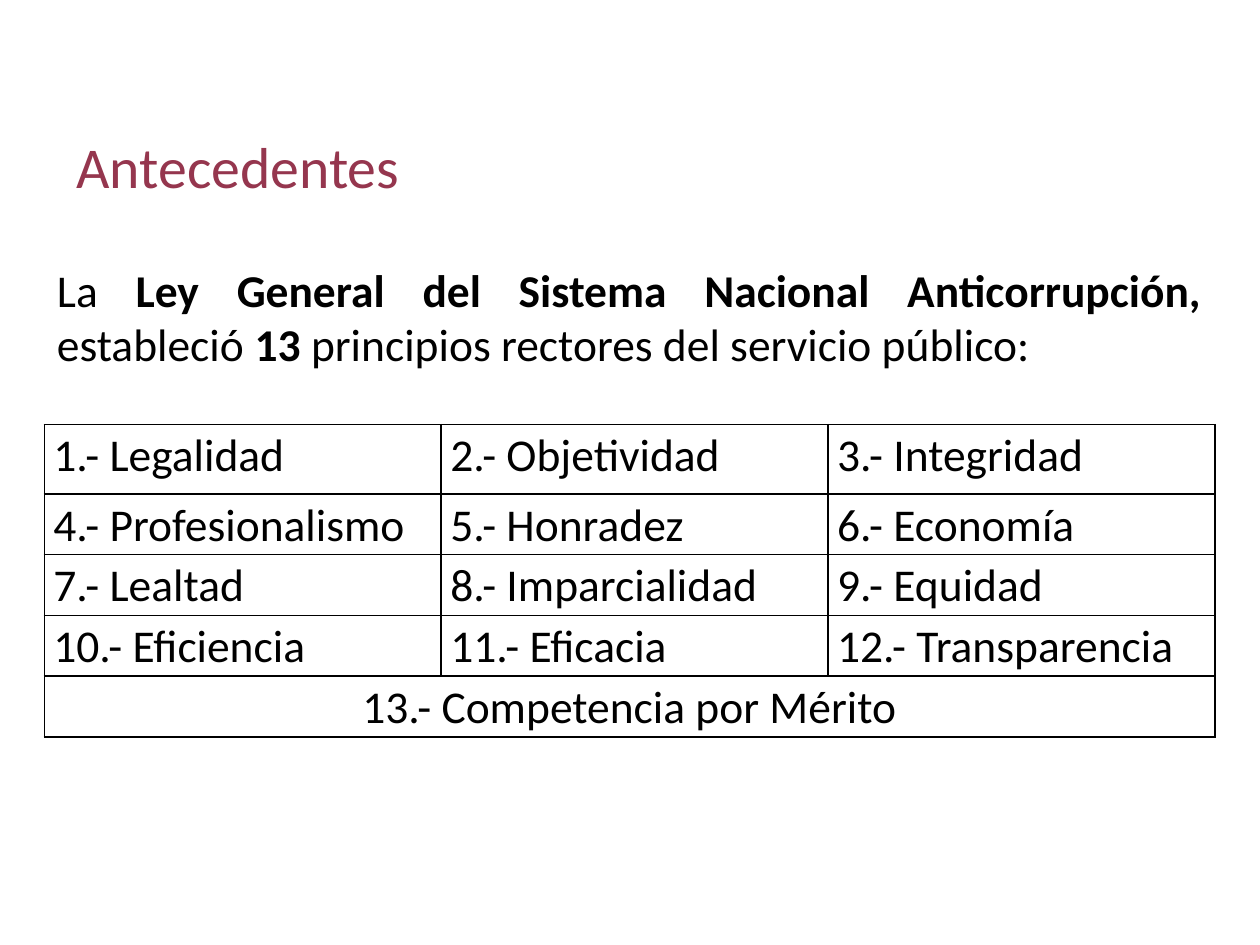
from lxml.etree import SubElement
from pptx import Presentation
from pptx.dml.color import RGBColor
from pptx.enum.text import MSO_ANCHOR, MSO_AUTO_SIZE, PP_ALIGN
from pptx.oxml.ns import qn
from pptx.util import Pt

BLACK = RGBColor(0, 0, 0)
WHITE = RGBColor(255, 255, 255)
WINE = RGBColor(0x95, 0x36, 0x4E)

HEADING = "Antecedentes"
INTRO = [  # text, bold
    ("La ", False),
    ("Ley General del Sistema Nacional Anticorrupción, ", True),
    ("estableció ", False),
    ("13 ", True),
    ("principios rectores del servicio público: ", False),
]
VALUES = [
    "Legalidad", "Objetividad", "Integridad",
    "Profesionalismo", "Honradez", "Economía",
    "Lealtad", "Imparcialidad", "Equidad",
    "Eficiencia", "Eficacia", "Transparencia",
    "Competencia por Mérito",
]
LEFT, WIDTH = 25.3, 669
COLS = [226.8, 221.1, 221.1]
ROWS = [39.6] + [34.75] * 4


def style(par, size, color):
    par.font.name = "Calibri"
    par.font.size = Pt(size)
    par.font.color.rgb = color


def border(cell):
    """Draw a thin black line on all four sides of a cell."""
    props = cell._tc.get_or_add_tcPr()
    for i, side in enumerate(("lnL", "lnR", "lnT", "lnB")):
        line = SubElement(props, qn(f"a:{side}"), w=str(Pt(1)))
        fill = SubElement(line, qn("a:solidFill"))
        SubElement(fill, qn("a:srgbClr"), val=str(BLACK))
        props.insert(i, line)


def add_intro(slide):
    box = slide.shapes.title
    box.left, box.top, box.width, box.height = map(Pt, (LEFT, 136.8, WIDTH, 87.8))
    box.fill.solid()
    box.fill.fore_color.rgb = WHITE
    frame = box.text_frame
    frame.auto_size = MSO_AUTO_SIZE.NONE
    frame.vertical_anchor = MSO_ANCHOR.MIDDLE
    par = frame.paragraphs[0]
    par.alignment = PP_ALIGN.JUSTIFY
    style(par, 26, BLACK)
    for text, bold in INTRO:
        run = par.add_run()
        run.text = text
        run.font.bold = bold


def add_heading(slide):
    box = slide.shapes.add_textbox(Pt(36.7), Pt(71.3), Pt(476), Pt(47.5))
    frame = box.text_frame
    frame.word_wrap = True
    frame.text = HEADING
    style(frame.paragraphs[0], 33, WINE)


def add_grid(slide):
    table = slide.shapes.add_table(
        len(ROWS), len(COLS), Pt(LEFT), Pt(242.6), Pt(WIDTH), Pt(sum(ROWS))
    ).table
    for col, width in zip(table.columns, COLS):
        col.width = Pt(width)
    for row, height in zip(table.rows, ROWS):
        row.height = Pt(height)
    last = len(ROWS) - 1
    table.cell(last, 0).merge(table.cell(last, len(COLS) - 1))
    for cell in table.iter_cells():
        cell.fill.solid()
        cell.fill.fore_color.rgb = WHITE
        border(cell)
    for i, value in enumerate(VALUES):
        row, col = divmod(i, len(COLS))
        cell = table.cell(row, col)
        cell.margin_left = cell.margin_right = Pt(5.2)
        cell.margin_top = cell.margin_bottom = 0
        cell.text = f"{i + 1}.- {value}"
        par = cell.text_frame.paragraphs[0]
        par.line_spacing = 1.07
        par.alignment = PP_ALIGN.CENTER if row == last else PP_ALIGN.LEFT
        style(par, 26, BLACK)


def main():
    deck = Presentation()
    deck.slide_width, deck.slide_height = Pt(720), Pt(540)
    slide = deck.slides.add_slide(deck.slide_layouts[5])
    add_intro(slide)
    add_heading(slide)
    add_grid(slide)
    deck.save("out.pptx")


if __name__ == "__main__":
    main()
